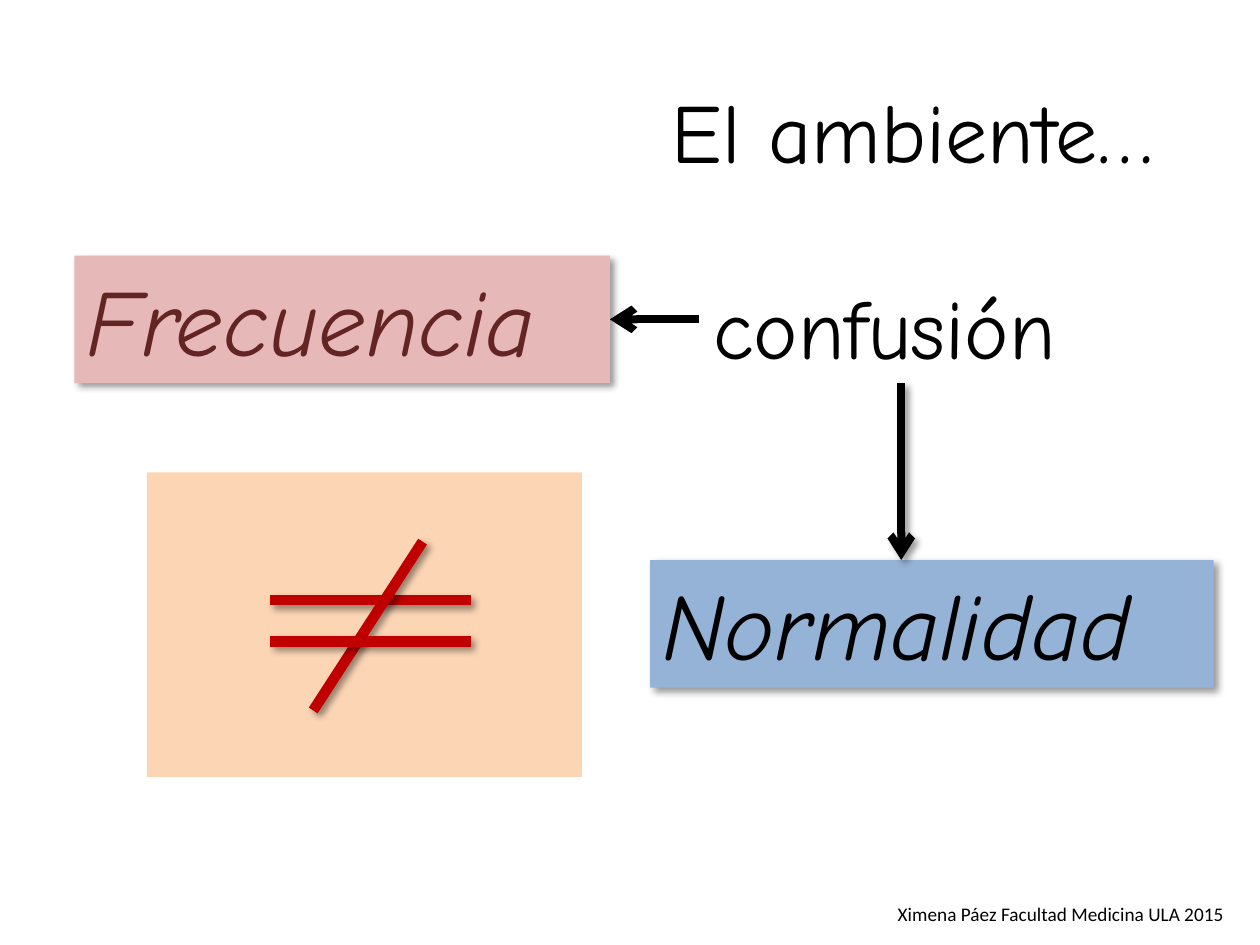
from lxml import etree
from pptx import Presentation
from pptx.dml.color import RGBColor
from pptx.enum import shapes, text
from pptx.oxml.ns import qn
from pptx.util import Pt

HAND_FONT = "Comic Neue"
BLACK, RED = "000000", "C00000"


def rgb(value):
    return RGBColor.from_string(value)


def add_effects(sp, shadow):
    """Give a shape an effect list, with a soft shadow or empty."""
    effects = etree.SubElement(sp._element.spPr, qn("a:effectLst"))
    if shadow:
        outer = etree.SubElement(effects, qn("a:outerShdw"), blurRad=str(Pt(4)),
                                 dist=str(Pt(3)), dir=str(45 * 60000),
                                 algn="tl", rotWithShape="0")
        color = etree.SubElement(outer, qn("a:srgbClr"), val=BLACK)
        etree.SubElement(color, qn("a:alpha"), val="40000")


def write(sp, words, size, color=BLACK, font=HAND_FONT, italic=False,
          align=text.PP_ALIGN.LEFT):
    tf = sp.text_frame
    tf.text = words
    tf.word_wrap = True
    tf.auto_size = text.MSO_AUTO_SIZE.NONE
    tf.vertical_anchor = text.MSO_ANCHOR.TOP
    p = tf.paragraphs[0]
    p.alignment = align
    f = p.runs[0].font
    f.name, f.size, f.italic = font, Pt(size), italic
    f.color.rgb = rgb(color)


def add_box(s, box, fill, shadow=False):
    sp = s.shapes.add_shape(shapes.MSO_SHAPE.RECTANGLE, *map(Pt, box))
    sp.fill.solid()
    sp.fill.fore_color.rgb = rgb(fill)
    sp.line.fill.background()
    add_effects(sp, shadow)
    return sp


def add_line(s, start, end, color, width, arrow=False, shadow=True):
    line = s.shapes.add_connector(shapes.MSO_CONNECTOR.STRAIGHT,
                                  *map(Pt, start + end))
    line.line.color.rgb = rgb(color)
    line.line.width = Pt(width)
    if arrow:
        etree.SubElement(line.line._get_or_add_ln(), qn("a:tailEnd"), type="arrow")
    add_effects(line, shadow)


def add_title(s, box, words):
    sp = s.shapes.title
    sp.left, sp.top, sp.width, sp.height = map(Pt, box)
    write(sp, words, 48)


def add_label(s, box, words, size, **style):
    write(s.shapes.add_textbox(*map(Pt, box)), words, size, **style)


def add_concept(s, box, words, fill, color):
    write(add_box(s, box, fill, shadow=True), words, 54, color, italic=True)


def add_unequal_panel(s, box):
    left, top = box[:2]
    add_box(s, box, "FCD5B5")
    # Two bars crossed by a slash
    strokes = [((185, 73), (70.5, 73)), ((157.5, 39.5), (95, 136)),
               ((185, 96.5), (70.5, 96.5))]
    for ends in strokes:
        start, end = [(left + x, top + y) for x, y in ends]
        add_line(s, start, end, RED, 6)


def build_slide(prs):
    s = prs.slides.add_slide(prs.slide_layouts[5])
    add_title(s, (376.5, 42, 312, 65.5), "El ambiente…")

    # Contrasted concepts
    add_unequal_panel(s, (84, 270, 248.5, 174))
    add_concept(s, (42.5, 146, 306, 73), "Frecuencia", "E6B9B8", "632523")
    add_concept(s, (371.5, 320, 322, 73), "Normalidad", "95B3D7", BLACK)

    # Confusion between them
    add_label(s, (400.5, 154, 228, 65.5), "confusión", 48)
    add_line(s, (399.5, 182.5), (348.5, 182.5), BLACK, 4.5, arrow=True, shadow=False)
    add_line(s, (515, 219), (515, 320), BLACK, 4.5, arrow=True)

    # Credit line
    add_label(s, (504, 512, 202.5, 21), "Ximena Páez Facultad Medicina ULA 2015",
              11, font="Calibri", align=text.PP_ALIGN.RIGHT)


def main():
    prs = Presentation()
    prs.slide_width, prs.slide_height = Pt(720), Pt(540)
    build_slide(prs)
    prs.save("out.pptx")


if __name__ == "__main__":
    main()
